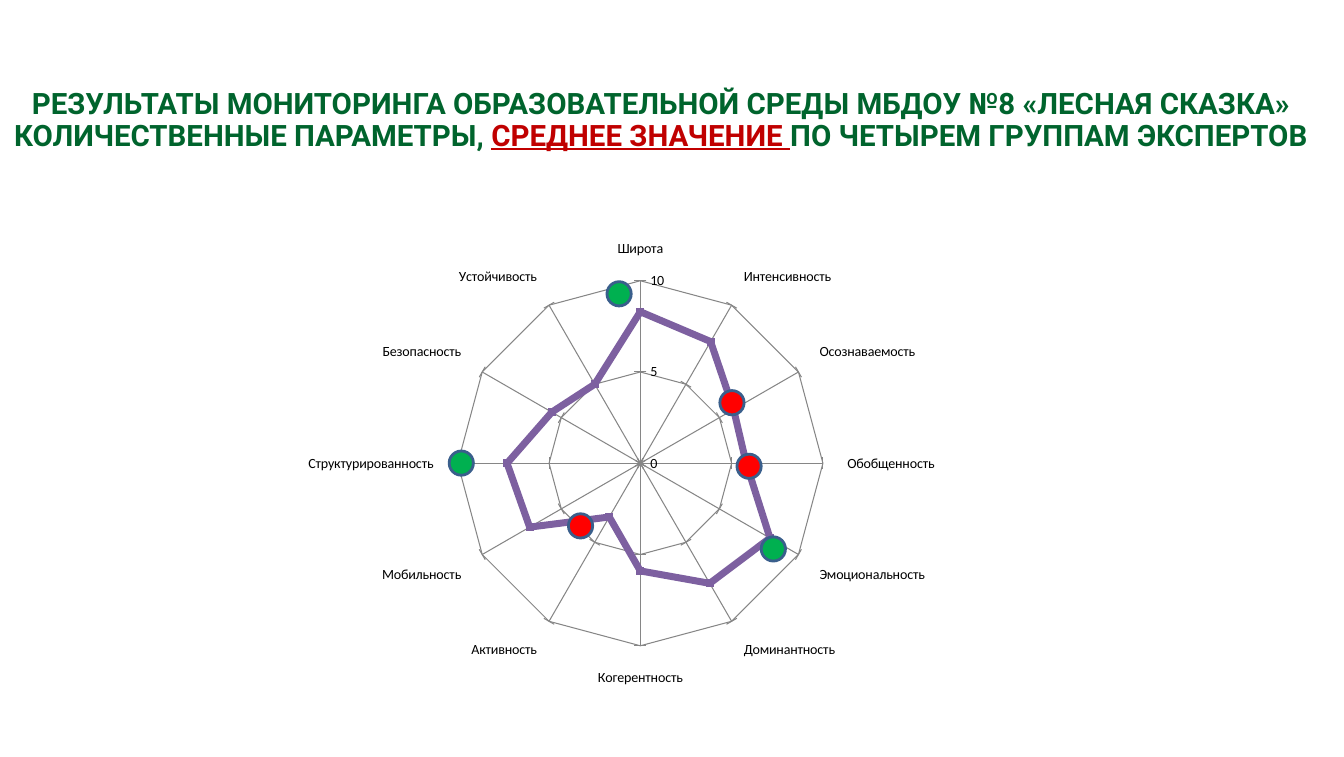
from lxml import etree
from pptx import Presentation
from pptx.chart.data import CategoryChartData
from pptx.dml.color import RGBColor
from pptx.enum.chart import XL_CHART_TYPE as CHART, XL_MARKER_STYLE as MARKER
from pptx.enum.chart import XL_TICK_MARK as TICK
from pptx.enum.shapes import MSO_SHAPE as SHAPE
from pptx.enum.text import MSO_ANCHOR as ANCHOR, MSO_AUTO_SIZE as AUTO, PP_ALIGN as ALIGN
from pptx.oxml.ns import qn
from pptx.util import Cm, Pt

GREEN, RED = "00B050", "FF0000"
TITLE_GREEN, TITLE_RED = "00642D", "C00000"

TITLE = [
    ("РЕЗУЛЬТАТЫ МОНИТОРИНГА ОБРАЗОВАТЕЛЬНОЙ СРЕДЫ МБДОУ №8 «ЛЕСНАЯ СКАЗКА» "
     "КОЛИЧЕСТВЕННЫЕ ПАРАМЕТРЫ, ", TITLE_GREEN, False),
    ("СРЕДНЕЕ ЗНАЧЕНИЕ ", TITLE_RED, True),
    ("ПО ЧЕТЫРЕМ ГРУППАМ ЭКСПЕРТОВ", TITLE_GREEN, False),
]

SCORES = {
    "Широта": 8.3,
    "Интенсивность": 7.7,
    "Осознаваемость": 5.9,
    "Обобщенность": 5.8,
    "Эмоциональность": 8.2,
    "Доминантность": 7.6,
    "Когерентность": 5.9,
    "Активность": 3.4,
    "Мобильность": 7,
    "Структурированность": 7.3,
    "Безопасность": 5.6,
    "Устойчивость": 5,
}

DOTS = [
    (15.27, 7.09, GREEN),
    (18.54, 11.43, RED),
    (14.3, 12.93, RED),
    (18.11, 9.83, RED),
    (11.3, 11.35, GREEN),
    (19.15, 13.51, GREEN),
]


def rgb(value):
    return RGBColor.from_string(value)


class SlideBuilder:
    title_font = "Roboto"
    chart_font = "Calibri"
    text = "000000"
    grid = "868686"
    series = "7D60A0"
    outline = "3A5F8C"
    dot_size = 0.61

    def __init__(self, prs):
        self.s = prs.slides.add_slide(prs.slide_layouts[5])

    def title(self, runs, x, y, w, h):
        sp = self.s.shapes.title
        sp.left, sp.top, sp.width, sp.height = Cm(x), Cm(y), Cm(w), Cm(h)
        tf = sp.text_frame
        tf.word_wrap = True
        tf.auto_size = AUTO.NONE
        tf.vertical_anchor = ANCHOR.TOP
        tf.margin_left = tf.margin_right = tf.margin_top = tf.margin_bottom = 0
        p = tf.paragraphs[0]
        p.alignment = ALIGN.CENTER
        p.line_spacing = 0.9
        p.space_before = Pt(0)
        for text, color, underline in runs:
            r = p.add_run()
            r.text = text
            r.font.name = self.title_font
            r.font.size = Pt(21)
            r.font.bold = True
            r.font.underline = underline
            r.font.color.rgb = rgb(color)

    def line(self, line, color, width):
        line.color.rgb = rgb(color)
        line.width = Pt(width)

    def plot_area(self, chart, **place):
        area = chart._chartSpace.chart.plotArea
        for old in area.findall(qn("c:layout")):
            area.remove(old)
        layout = etree.Element(qn("c:layout"))
        manual = etree.SubElement(layout, qn("c:manualLayout"))
        settings = {"layoutTarget": "inner", "xMode": "edge", "yMode": "edge", **place}
        for name, value in settings.items():
            etree.SubElement(manual, qn("c:" + name)).set("val", str(value))
        area.insert(0, layout)

    def radar(self, scores, x, y, w, h):
        data = CategoryChartData(number_format="General")
        data.categories = list(scores)
        data.add_series("Series 1", list(scores.values()))
        chart = self.s.shapes.add_chart(
            CHART.RADAR_MARKERS, Cm(x), Cm(y), Cm(w), Cm(h), data).chart
        chart.has_title = chart.has_legend = False
        chart.font.name = self.chart_font
        chart.font.size = Pt(10)
        chart.font.color.rgb = rgb(self.text)
        self.plot_area(chart, x=0.26, y=0.17, w=0.54, h=0.66)

        for axis, tick in ((chart.category_axis, TICK.OUTSIDE), (chart.value_axis, TICK.CROSS)):
            axis.has_major_gridlines = True
            axis.major_tick_mark = tick
            axis.minor_tick_mark = TICK.NONE
            axis.tick_labels.number_format = "General"
            axis.tick_labels.number_format_is_linked = False
            self.line(axis.major_gridlines.format.line, self.grid, 0.75)
            self.line(axis.format.line, self.grid, 0.75)
        axis = chart.value_axis
        axis.minimum_scale, axis.maximum_scale, axis.major_unit = 0, 10, 5

        chart.plots[0].vary_by_categories = False
        series = chart.plots[0].series[0]
        series.smooth = False
        self.line(series.format.line, self.series, 5)
        marker = series.marker
        marker.style = MARKER.SQUARE
        marker.size = 5
        marker.format.fill.solid()
        marker.format.fill.fore_color.rgb = rgb(self.series)
        self.line(marker.format.line, self.series, 0.75)

    def dot(self, x, y, color):
        size = Cm(self.dot_size)
        sp = self.s.shapes.add_shape(SHAPE.OVAL, Cm(x), Cm(y), size, size)
        sp.shadow.inherit = False
        sp.fill.solid()
        sp.fill.fore_color.rgb = rgb(color)
        self.line(sp.line, self.outline, 2)


def main():
    prs = Presentation()
    prs.slide_width, prs.slide_height = Cm(33.81), Cm(19.05)
    slide = SlideBuilder(prs)
    slide.title(TITLE, -0.28, 2.24, 33.81, 3.58)
    slide.radar(SCORES, 7.09, 4.7, 17.02, 13.92)
    for x, y, color in DOTS:
        slide.dot(x, y, color)
    prs.save("out.pptx")


if __name__ == "__main__":
    main()
